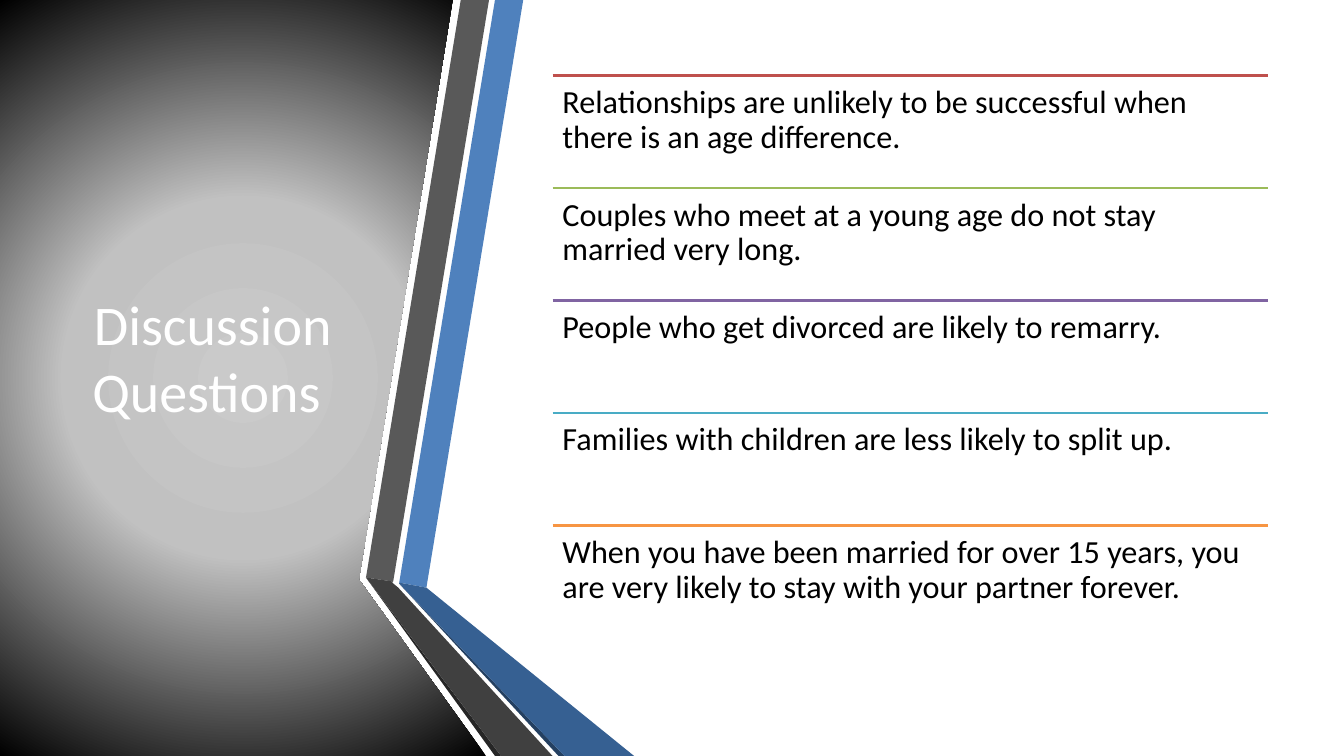
from dataclasses import dataclass

from lxml.etree import SubElement
from pptx import Presentation
from pptx.dml.color import RGBColor
from pptx.enum.shapes import MSO_CONNECTOR
from pptx.enum.text import MSO_ANCHOR as Anchor, PP_ALIGN as Align
from pptx.oxml import parse_xml
from pptx.oxml.ns import nsdecls, qn
from pptx.util import Inches, Pt


@dataclass(frozen=True)
class Theme:
    font: str = "Calibri"
    title_size: int = 40
    question_size: int = 23
    rule_width: int = 2
    title_color: str = "FFFFFF"
    question_color: str = "000000"
    panel_stops: tuple = ((0, "CACACA"), (40, "C1C1C1"), (100, "000000"))
    blue: str = "4F81BD"
    blue_fold: str = "366092"
    blue_edge: str = "244061"
    gray: str = "595959"
    gray_fold: str = "404040"
    gray_edge: str = "262626"
    rules: tuple = ("BF504D", "9BBB59", "8064A2", "49ACC5", "F79543")


THEME = Theme()

PANEL = [(0, 0), (4.49, 0), (3.56, 5.75), (4.82, 7.5), (0, 7.5)]

RIBBONS = [
    (THEME.blue, [(3.96, 5.78), (4.23, 5.83), (5.19, 0), (4.91, 0)]),
    (THEME.gray, [(4.85, 0), (4.57, 0), (3.63, 5.73), (3.9, 5.77)]),
    (THEME.gray_edge, [(3.63, 5.73), (4.91, 7.5), (4.97, 7.5)]),
    (THEME.blue_edge, [(3.96, 5.79), (5.54, 7.5), (5.6, 7.5)]),
    (THEME.blue_fold, [(3.96, 5.79), (5.6, 7.5), (6.29, 7.5), (4.23, 5.83), (3.96, 5.78)]),
    (THEME.gray_fold, [(5.48, 7.5), (3.95, 5.83), (3.89, 5.78), (3.9, 5.77),
                       (3.63, 5.73), (4.97, 7.5)]),
]

QUESTIONS = [
    "Relationships are unlikely to be successful when there is an age difference.",
    "Couples who meet at a young age do not stay married very long.",
    "People who get divorced are likely to remarry.",
    "Families with children are less likely to split up.",
    "When you have been married for over 15 years, you are very likely to stay "
    "with your partner forever.",
]


def add_text(shapes, box, text, *, size, color, align=Align.LEFT, anchor=Anchor.TOP,
             inset=(0.1, 0.1), spacing=1.0):
    frame = shapes.add_textbox(*map(Inches, box)).text_frame
    frame.word_wrap = True
    frame.vertical_anchor = anchor
    frame.margin_left = frame.margin_right = Inches(inset[0])
    frame.margin_top = frame.margin_bottom = Inches(inset[1])
    paragraph = frame.paragraphs[0]
    paragraph.alignment = align
    paragraph.line_spacing = spacing
    run = paragraph.add_run()
    run.text = text
    run.font.name = THEME.font
    run.font.size = Pt(size)
    run.font.color.rgb = RGBColor.from_string(color)


def add_outline(shapes, origin, points):
    left, top = origin
    start, *rest = [(Inches(left + x), Inches(top + y)) for x, y in points]
    builder = shapes.build_freeform(*start)
    builder.add_line_segments(rest, close=True)
    outline = builder.convert_to_shape()
    outline.shadow.inherit = False
    outline.line.fill.background()
    return outline


def fill_radial(shape, stops):
    shape.fill.background()
    gradient = parse_xml(
        f'<a:gradFill {nsdecls("a")} rotWithShape="1"><a:gsLst/><a:path path="circle">'
        '<a:fillToRect l="50000" t="50000" r="50000" b="50000"/></a:path></a:gradFill>')
    for position, color in stops:
        stop = SubElement(gradient[0], qn("a:gs"), pos=str(position * 1000))
        SubElement(stop, qn("a:srgbClr"), val=color)
    properties = shape.element.spPr
    properties.replace(properties.find(qn("a:noFill")), gradient)


def add_rule(shapes, left, top, width, color):
    rule = shapes.add_connector(MSO_CONNECTOR.STRAIGHT, Inches(left), Inches(top),
                                Inches(left + width), Inches(top))
    rule.line.color.rgb = RGBColor.from_string(color)
    rule.line.width = Pt(THEME.rule_width)
    SubElement(rule.element.spPr, qn("a:effectLst"))


def draw_title_panel(slide, left, top):
    origin = (left, top)
    fill_radial(add_outline(slide.shapes, origin, PANEL), THEME.panel_stops)
    ribbons = slide.shapes.add_group_shape().shapes
    for color, points in RIBBONS:
        ribbon = add_outline(ribbons, origin, points)
        ribbon.fill.solid()
        ribbon.fill.fore_color.rgb = RGBColor.from_string(color)
    add_text(slide.shapes, (left + 0.59, top + 0.75, 3.04, 5.58), "Discussion Questions ",
             size=THEME.title_size, color=THEME.title_color, align=Align.CENTER,
             anchor=Anchor.MIDDLE, inset=(0.1, 0.05))


def draw_questions(slide, left, top, width, height):
    shapes = slide.shapes.add_group_shape().shapes
    row_height = height / len(QUESTIONS)
    for row, (question, color) in enumerate(zip(QUESTIONS, THEME.rules)):
        row_top = top + row * row_height
        add_rule(shapes, left, row_top, width, color)
        add_text(shapes, (left, row_top, width, row_height), question,
                 size=THEME.question_size, color=THEME.question_color, spacing=0.9)


def main():
    deck = Presentation()
    deck.slide_width, deck.slide_height = Inches(13.33), Inches(7.5)
    slide = deck.slides.add_slide(deck.slide_layouts[6])
    draw_title_panel(slide, 0, 0)
    draw_questions(slide, 5.48, 0.75, 7.1, 5.58)
    deck.save("out.pptx")


if __name__ == "__main__":
    main()
